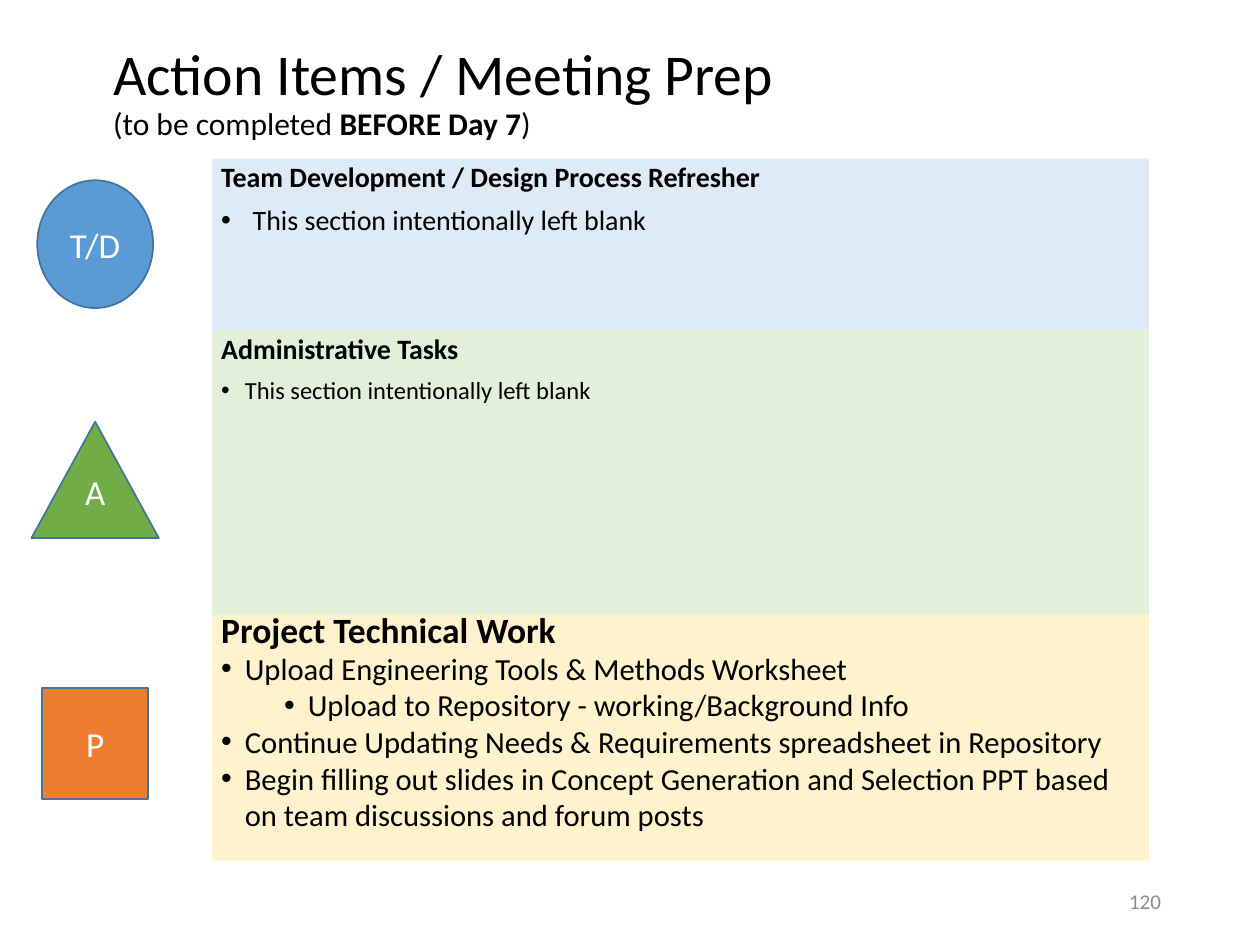
from lxml import etree
from pptx import Presentation
from pptx.dml.color import RGBColor
from pptx.enum import shapes, text
from pptx.oxml.ns import qn
from pptx.util import Pt

BLACK = RGBColor(0x00, 0x00, 0x00)
WHITE = RGBColor(0xFF, 0xFF, 0xFF)
GRAY = RGBColor(0x8C, 0x8C, 0x8C)
OUTLINE = RGBColor(0x43, 0x73, 0x9E)
BLUE = RGBColor(0x5B, 0x9B, 0xD5)
GREEN = RGBColor(0x70, 0xAD, 0x47)
ORANGE = RGBColor(0xED, 0x7D, 0x31)
PALE_BLUE = RGBColor(0xDE, 0xEB, 0xF7)
PALE_GREEN = RGBColor(0xE2, 0xF0, 0xD9)
PALE_YELLOW = RGBColor(0xFF, 0xF2, 0xCC)

ALIGN = text.PP_ALIGN
ANCHOR = text.MSO_ANCHOR
SHAPE = shapes.MSO_SHAPE


class SlideBuilder:
    font = "Calibri"
    panel_left, panel_width = 121, 535.5
    badge_center = 54.4

    def __init__(self, slide):
        self.slide = slide

    def add_run(self, paragraph, words, size, color=BLACK, bold=False):
        run = paragraph.add_run()
        run.text = words
        run.font.name = self.font
        run.font.size = Pt(size)
        run.font.bold = bold
        run.font.color.rgb = color

    def add_bullet(self, paragraph, left, hanging):
        properties = paragraph._p.get_or_add_pPr()
        properties.set("marL", str(Pt(left)))
        properties.set("indent", str(-Pt(hanging)))
        etree.SubElement(properties, qn("a:buFont")).set("typeface", "Arial")
        etree.SubElement(properties, qn("a:buChar")).set("char", "•")

    def add_text_box(self, left, top, width, height):
        """Add a wrapped, vertically centred box and return its first paragraph."""
        box = self.slide.shapes.add_textbox(Pt(left), Pt(top), Pt(width), Pt(height))
        box.text_frame.word_wrap = True
        box.text_frame.vertical_anchor = ANCHOR.MIDDLE
        return box.text_frame.paragraphs[0]

    def add_shape(self, kind, left, top, width, height, fill):
        shape = self.slide.shapes.add_shape(kind, Pt(left), Pt(top), Pt(width), Pt(height))
        shape.shadow.inherit = False
        shape.fill.solid()
        shape.fill.fore_color.rgb = fill
        shape.line.fill.background()
        shape.text_frame.word_wrap = True
        return shape

    def add_badge(self, kind, top, width, height, fill, label, bottom_inset=3.6):
        left = self.badge_center - width / 2
        shape = self.add_shape(kind, left, top, width, height, fill)
        shape.line.color.rgb = OUTLINE
        shape.line.width = Pt(1)
        frame = shape.text_frame
        frame.vertical_anchor = ANCHOR.MIDDLE
        frame.margin_bottom = Pt(bottom_inset)
        paragraph = frame.paragraphs[0]
        paragraph.alignment = ALIGN.CENTER
        self.add_run(paragraph, label, 20, WHITE)

    def add_panel(self, top, height, fill, heading, heading_size, heading_spacing,
                  items, item_size, item_spacing, space_before, hanging=13.5):
        """Add a section; items are (level, words) pairs."""
        shape = self.add_shape(SHAPE.RECTANGLE, self.panel_left, top,
                               self.panel_width, height, fill)
        frame = shape.text_frame
        frame.vertical_anchor = ANCHOR.TOP
        frame.margin_left = frame.margin_right = Pt(5.4)
        frame.margin_top = frame.margin_bottom = Pt(2.7)
        title = frame.paragraphs[0]
        title.alignment = ALIGN.LEFT
        title.line_spacing = heading_spacing
        title.space_before = Pt(7.5)
        self.add_run(title, heading, heading_size, bold=True)
        for level, words in items:
            paragraph = frame.add_paragraph()
            paragraph.alignment = ALIGN.LEFT
            paragraph.level = level
            paragraph.line_spacing = item_spacing
            paragraph.space_before = Pt(space_before)
            self.add_bullet(paragraph, hanging + 36 * level, hanging)
            self.add_run(paragraph, words, item_size)


def main():
    presentation = Presentation()
    presentation.slide_width, presentation.slide_height = Pt(720), Pt(540)
    builder = SlideBuilder(presentation.slides.add_slide(presentation.slide_layouts[6]))

    title = builder.add_text_box(57.5, 18.7, 620.6, 70)
    title.line_spacing = 0.9
    builder.add_run(title, "Action Items / Meeting Prep", 33)
    title.add_line_break()
    builder.add_run(title, "(to be completed ", 18)
    builder.add_run(title, "BEFORE Day 7", 18, bold=True)
    builder.add_run(title, ")", 18)

    blank = [(0, "This section intentionally left blank")]
    builder.add_panel(90.7, 98, PALE_BLUE, "Team Development / Design Process Refresher",
                      16, 0.9, blank, 16, 0.9, 7.5, hanging=18)
    builder.add_panel(188.7, 162.7, PALE_GREEN, "Administrative Tasks",
                      16, 0.9, blank, 14, 0.9, 7.5)
    builder.add_panel(351.4, 140.4, PALE_YELLOW, "Project Technical Work", 20.3, 0.7, [
        (0, "Upload Engineering Tools & Methods Worksheet"),
        (1, "Upload to Repository - working/Background Info"),
        (0, "Continue Updating Needs & Requirements spreadsheet in Repository"),
        (0, "Begin filling out slides in Concept Generation and Selection PPT "
            "based on team discussions and forum posts"),
    ], 17.5, 1, 0)

    builder.add_badge(SHAPE.OVAL, 103, 66.2, 73, BLUE, "T/D")
    builder.add_badge(SHAPE.ISOSCELES_TRIANGLE, 241, 72.8, 66.5, GREEN, "A", bottom_inset=23)
    builder.add_badge(SHAPE.RECTANGLE, 393, 60.6, 63.4, ORANGE, "P")

    number = builder.add_text_box(508.5, 500.5, 162, 28.8)
    number.alignment = ALIGN.RIGHT
    builder.add_run(number, "120", 12, GRAY)

    presentation.save("out.pptx")


if __name__ == "__main__":
    main()
